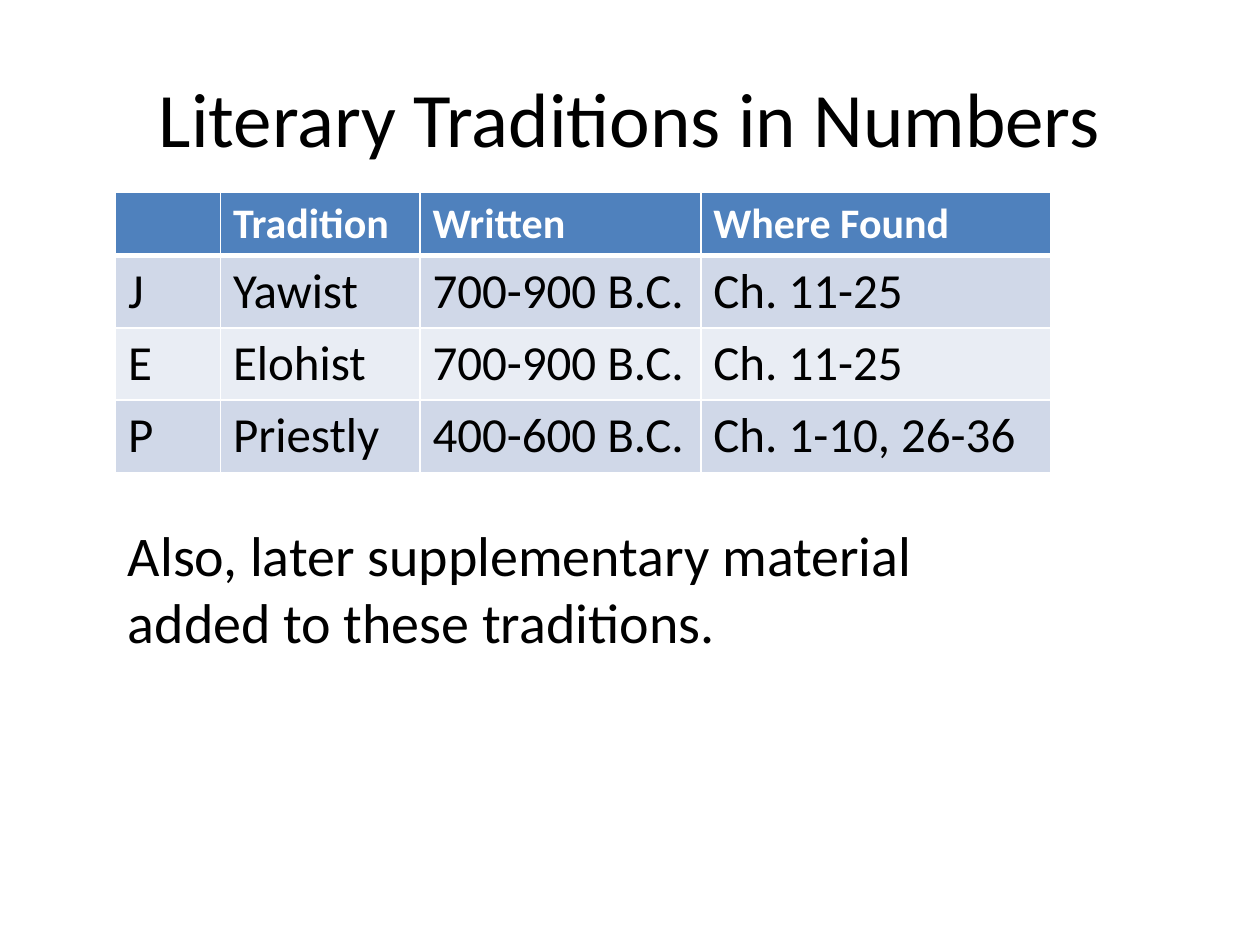
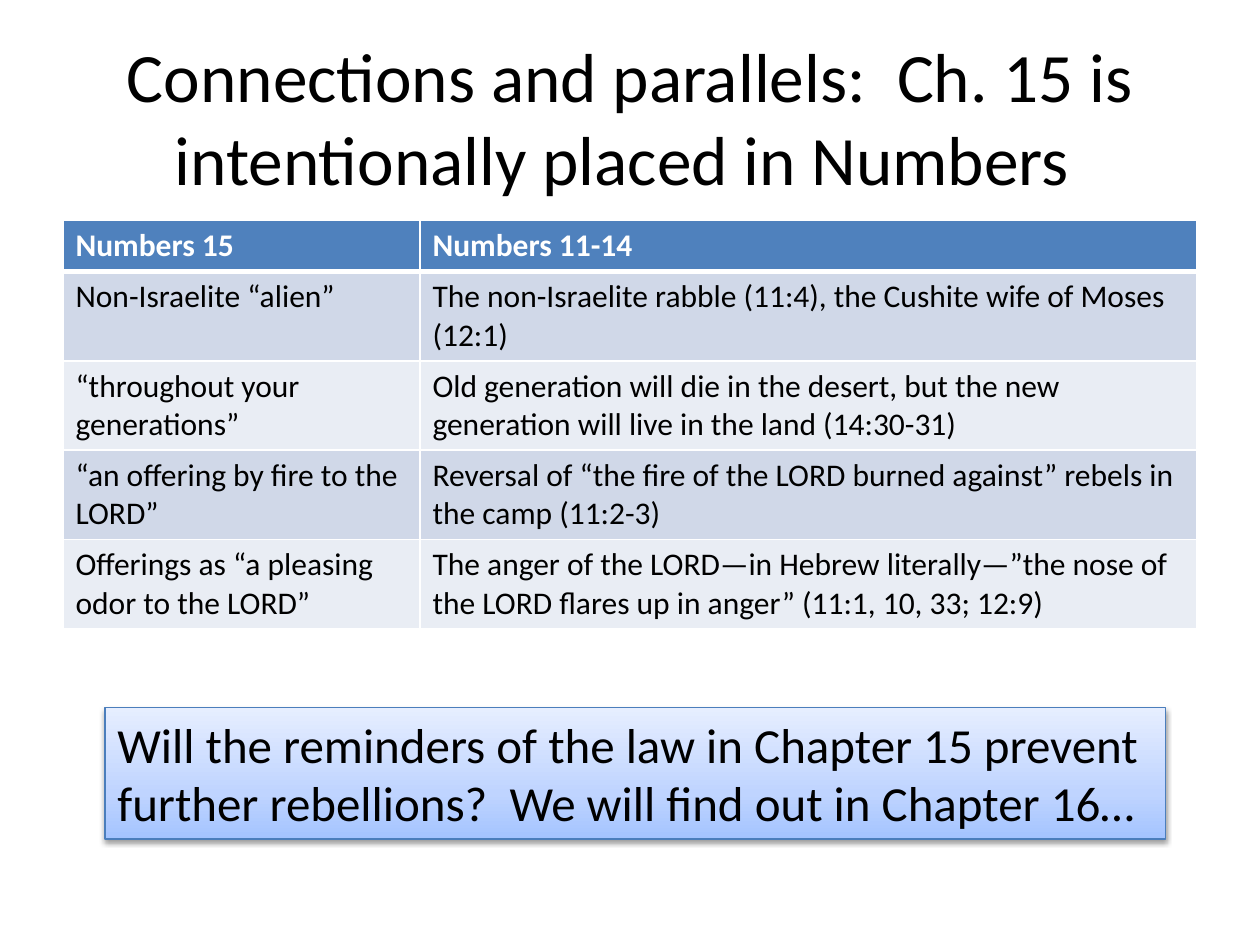
from lxml import etree
from pptx import Presentation
from pptx.dml.color import RGBColor
from pptx.enum.shapes import MSO_SHAPE
from pptx.enum.text import MSO_ANCHOR, PP_ALIGN
from pptx.oxml import parse_xml
from pptx.oxml.ns import nsdecls, qn
from pptx.util import Pt

RECT = MSO_SHAPE.RECTANGLE
TOP, MIDDLE = MSO_ANCHOR.TOP, MSO_ANCHOR.MIDDLE
LEFT, CENTER = PP_ALIGN.LEFT, PP_ALIGN.CENTER

FONT = "Calibri"
BLACK, WHITE = "000000", "FFFFFF"
HEADER, BANDS = "4F81BD", ("D0D8E8", "E9EDF4")


def rgb(value):
    return RGBColor.from_string(value)


def write(tf, text, size, color=BLACK, bold=False, align=LEFT, anchor=TOP):
    tf.word_wrap = True
    tf.vertical_anchor = anchor
    p = tf.paragraphs[0]
    p.alignment = align
    r = p.add_run()
    r.text = text
    r.font.name, r.font.size, r.font.bold = FONT, Pt(size), bold
    r.font.color.rgb = rgb(color)
    return p


# Content: title, title size, then the table of each slide
SLIDES = [
    dict(
        title="Literary Traditions in Numbers", title_size=44,
        left=66, top=110, cols=(60, 114, 160.5, 200), heights=(36, 41.3),
        sizes=(24, 28),
        rows=[
            ("", "Tradition", "Written", "Where Found"),
            ("J", "Yawist", "700-900 B.C.", "Ch. 11-25"),
            ("E", "Elohist", "700-900 B.C.", "Ch. 11-25"),
            ("P", "Priestly", "400-600 B.C.", "Ch. 1-10, 26-36"),
        ],
    ),
    dict(
        title="Connections and parallels:  Ch. 15 is intentionally placed in Numbers ",
        title_size=39.6,
        left=36, top=126, cols=(204, 444), heights=(29.2, 51),
        sizes=(18, 18),
        rows=[
            ("Numbers 15", "Numbers 11-14"),
            ("Non-Israelite “alien”",
             "The non-Israelite rabble (11:4), the Cushite wife of Moses (12:1)"),
            ("“throughout your generations”",
             "Old generation will die in the desert, but the new generation "
             "will live in the land (14:30-31)"),
            ("“an offering by fire to the LORD”",
             "Reversal of “the fire of the LORD burned against” rebels in the camp (11:2-3)"),
            ("Offerings as “a pleasing odor to the LORD”",
             "The anger of the LORD—in Hebrew literally—”the nose of the LORD "
             "flares up in anger” (11:1, 10, 33; 12:9)"),
        ],
    ),
]

prs = Presentation()
prs.slide_width, prs.slide_height = Pt(720), Pt(540)

for content in SLIDES:
    s = prs.slides.add_slide(prs.slide_layouts[6])

    # Title
    box = s.shapes.add_textbox(Pt(36), Pt(21.6), Pt(648), Pt(90))
    write(box.text_frame, content["title"], content["title_size"],
          align=CENTER, anchor=MIDDLE)

    # Table with a header row and two alternating bands
    rows, cols = content["rows"], content["cols"]
    heights = [content["heights"][min(i, 1)] for i in range(len(rows))]
    table = s.shapes.add_table(len(rows), len(cols), Pt(content["left"]),
                               Pt(content["top"]), Pt(sum(cols)), Pt(sum(heights))).table
    table.first_row = table.horz_banding = False
    for col, width in zip(table.columns, cols):
        col.width = Pt(width)
    for i, row in enumerate(rows):
        table.rows[i].height = Pt(heights[i])
        is_header = i == 0
        for j, text in enumerate(row):
            cell = table.cell(i, j)
            cell.fill.solid()
            cell.fill.fore_color.rgb = rgb(HEADER if is_header else BANDS[(i - 1) % 2])
            if text:
                write(cell.text_frame, text, content["sizes"][min(i, 1)],
                      WHITE if is_header else BLACK, is_header)
            # White cell borders, thicker below the header
            widths = dict(lnL=1, lnR=1, lnT=3 if i == 1 else 1, lnB=3 if is_header else 1)
            tcPr = cell._tc.get_or_add_tcPr()
            for k, (side, width) in enumerate(widths.items()):
                tcPr.insert(k, parse_xml(
                    f'<a:{side} {nsdecls("a")} w="{Pt(width)}"><a:solidFill>'
                    f'<a:srgbClr val="{WHITE}"/></a:solidFill></a:{side}>'))

traditions, parallels = prs.slides

# Remark below the traditions table
box = traditions.shapes.add_textbox(Pt(66), Pt(294), Pt(540), Pt(120))
p = write(box.text_frame,
          "Also, later supplementary material added to these traditions.", 32)
p.space_before = Pt(6.4)

# Closing question with a vertical gradient and a soft shadow
question = parallels.shapes.add_shape(RECT, Pt(60), Pt(404.5), Pt(606), Pt(75))
question.line.color.rgb = rgb("4B7EBC")
question.line.width = Pt(0.75)
question.shadow.inherit = False
spPr = question._element.spPr
stops = "".join(f'<a:gs pos="{pos * 1000}"><a:srgbClr val="{color}"/></a:gs>'
                for pos, color in ((0, "A4C4FF"), (35, "BFD4FF"), (100, "E6EEFF")))
spPr.find(qn("a:prstGeom")).addnext(parse_xml(
    f'<a:gradFill {nsdecls("a")} rotWithShape="1"><a:gsLst>{stops}</a:gsLst>'
    '<a:lin ang="16200000" scaled="0"/></a:gradFill>'))
shadow = etree.SubElement(spPr.find(qn("a:effectLst")), qn("a:outerShdw"),
                          blurRad=str(Pt(3.1)), dist=str(Pt(1.6)),
                          dir="5400000", rotWithShape="0")
shade = etree.SubElement(shadow, qn("a:srgbClr"), val=BLACK)
etree.SubElement(shade, qn("a:alpha"), val="38000")
write(question.text_frame,
      "Will the reminders of the law in Chapter 15 prevent further rebellions?  "
      "We will find out in Chapter 16…", 28)

prs.save("out.pptx")
